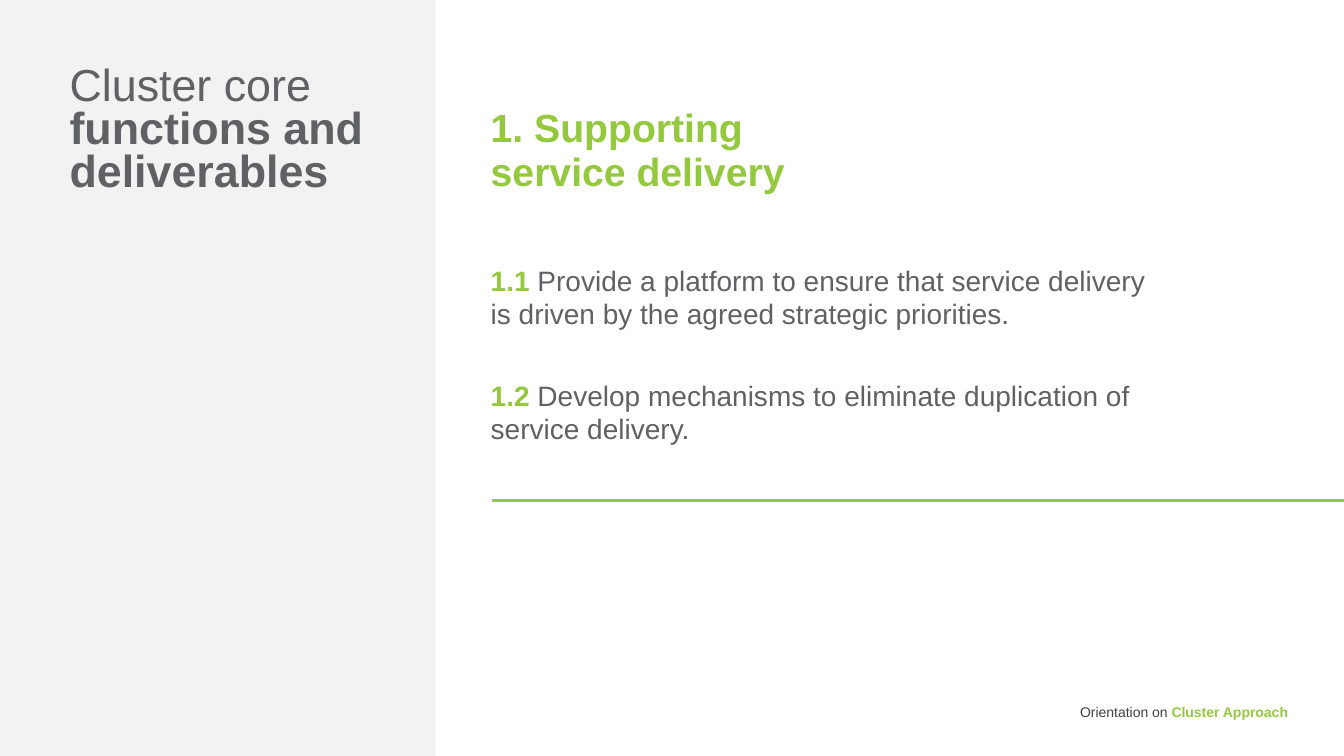
from collections import namedtuple
from dataclasses import dataclass

from lxml import etree
from pptx import Presentation
from pptx.dml.color import RGBColor
from pptx.enum.shapes import MSO_CONNECTOR, MSO_SHAPE
from pptx.enum.text import MSO_ANCHOR, MSO_AUTO_SIZE, PP_ALIGN
from pptx.oxml.ns import qn
from pptx.util import Pt

RECTANGLE, STRAIGHT = MSO_SHAPE.RECTANGLE, MSO_CONNECTOR.STRAIGHT
TOP, MIDDLE = MSO_ANCHOR.TOP, MSO_ANCHOR.MIDDLE
LEFT, RIGHT = PP_ALIGN.LEFT, PP_ALIGN.RIGHT
NO_AUTOFIT = MSO_AUTO_SIZE.NONE

Box = namedtuple("Box", "left top width height")


@dataclass(frozen=True)
class Theme:
    font: str = "Arial"
    green: RGBColor = RGBColor(0x95, 0xC9, 0x3D)
    grey: RGBColor = RGBColor(0x60, 0x61, 0x64)
    dark: RGBColor = RGBColor(0x40, 0x41, 0x43)
    panel: RGBColor = RGBColor(0xF2, 0xF2, 0xF2)
    title_size: int = 32
    heading_size: int = 28
    body_size: int = 20
    footer_size: int = 10


THEME = Theme()
SLIDE = Box(0, 0, 960, 540)
SIDE_PANEL = Box(0, 0, 311, SLIDE.height)
CONTENT = Box(350.5, 73.5, 480, 284)
FOOTER = Box(713.5, 497.5, 206.5, 18.5)

DELIVERABLES = [
    ("1.1", "Provide a platform to ensure that service delivery "
            "is driven by the agreed strategic priorities."),
    ("1.2", "Develop mechanisms to eliminate duplication of service delivery."),
]


def place(shape, box):
    shape.left, shape.top, shape.width, shape.height = map(Pt, box)


def set_frame(shape, insets, anchor=TOP):
    frame = shape.text_frame
    frame.word_wrap = True
    frame.auto_size = NO_AUTOFIT
    frame.vertical_anchor = anchor
    (frame.margin_left, frame.margin_top,
     frame.margin_right, frame.margin_bottom) = map(Pt, insets)
    return frame


def style(paragraph, size, spacing, align=LEFT):
    paragraph.font.name = THEME.font
    paragraph.font.size = Pt(size)
    paragraph.line_spacing = spacing
    paragraph.alignment = align


def add_run(paragraph, text, color, bold=False):
    run = paragraph.add_run()
    run.text = text
    run.font.color.rgb = color
    run.font.bold = bold


def add_side_panel(slide, box):
    # Background panel, sent behind the placeholders
    panel = slide.shapes.add_shape(RECTANGLE, *map(Pt, box))
    panel.shadow.inherit = False
    panel.fill.solid()
    panel.fill.fore_color.rgb = THEME.panel
    panel.line.fill.background()
    slide.shapes._spTree.insert(2, panel._element)

    # Title
    title = slide.shapes.title
    place(title, Box(box.left + 49.7, box.top + 47.5, box.width - 68.3, 93))
    wording = set_frame(title, (0, 3.6, 7.2, 3.6), MIDDLE).paragraphs[0]
    style(wording, THEME.title_size, 0.8)
    add_run(wording, "Cluster core", THEME.grey)
    wording.add_line_break()
    add_run(wording, "functions and deliverables", THEME.grey, True)


def add_content(slide, box):
    insets = (0, 3.6, 7.2, 3.6)

    # Heading
    heading = slide.shapes.add_textbox(*map(Pt, box._replace(height=67.5)))
    frame = set_frame(heading, insets)
    for index, line in enumerate(("1. Supporting", "service delivery")):
        paragraph = frame.add_paragraph() if index else frame.paragraphs[0]
        style(paragraph, THEME.heading_size, 0.93)
        add_run(paragraph, line, THEME.green, True)

    # Numbered deliverables
    deliverables = slide.placeholders[1]
    place(deliverables, box._replace(top=box.top + 111, height=138))
    frame = set_frame(deliverables, insets)
    for index, (number, wording) in enumerate(DELIVERABLES):
        paragraph = frame.add_paragraph() if index else frame.paragraphs[0]
        style(paragraph, THEME.body_size, 1.0)
        paragraph.space_before = Pt(34 if index else 0)
        properties = paragraph._p.get_or_add_pPr()
        properties.set("marL", "0")
        properties.set("indent", "0")
        etree.SubElement(properties, qn("a:buNone"))
        # Bullet settings come before the default run properties
        properties.append(properties.find(qn("a:defRPr")))
        add_run(paragraph, number, THEME.green, True)
        add_run(paragraph, " " + wording, THEME.grey)

    # Closing rule, running to the slide edge
    rule_top = Pt(box.top + box.height)
    rule = slide.shapes.add_connector(
        STRAIGHT, Pt(box.left + 1), rule_top, Pt(SLIDE.width), rule_top)
    rule.line.color.rgb = THEME.green
    rule.line.width = Pt(1.5)
    etree.SubElement(rule._element.spPr, qn("a:effectLst"))


def add_footer(slide, box):
    footer = slide.shapes.add_textbox(*map(Pt, box))
    wording = set_frame(footer, (7.2, 7.2, 0, 7.2)).paragraphs[0]
    style(wording, THEME.footer_size, 0.8, RIGHT)
    add_run(wording, "Orientation on ", THEME.dark)
    add_run(wording, "Cluster Approach", THEME.green, True)


def main():
    deck = Presentation()
    deck.slide_width, deck.slide_height = Pt(SLIDE.width), Pt(SLIDE.height)
    slide = deck.slides.add_slide(deck.slide_layouts[1])
    add_side_panel(slide, SIDE_PANEL)
    add_content(slide, CONTENT)
    add_footer(slide, FOOTER)
    deck.save("out.pptx")


if __name__ == "__main__":
    main()
